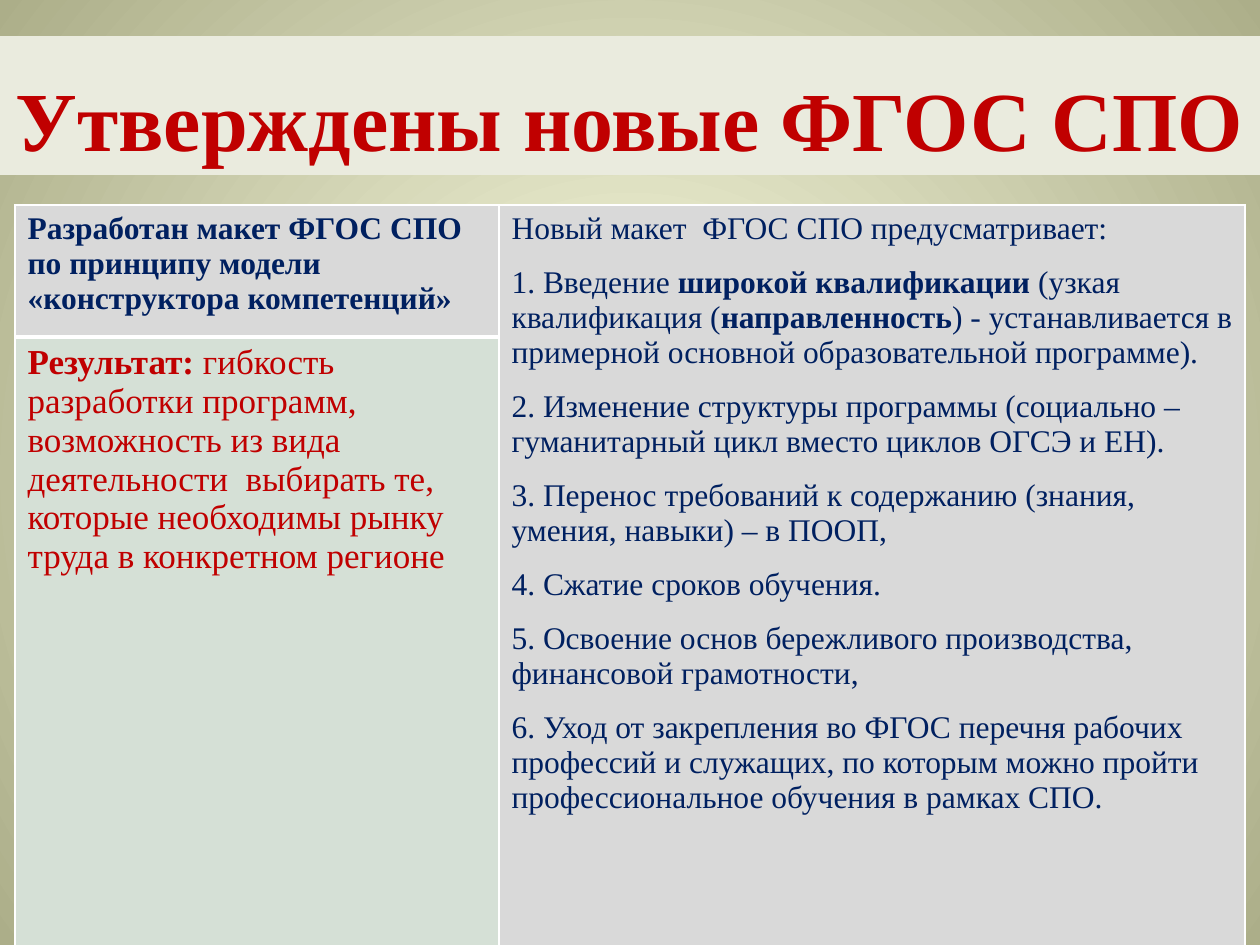
from lxml.etree import SubElement
from pptx import Presentation
from pptx.dml.color import RGBColor
from pptx.enum.text import MSO_ANCHOR, MSO_AUTO_SIZE, PP_ALIGN
from pptx.oxml import parse_xml
from pptx.oxml.ns import nsdecls, qn
from pptx.util import Emu, Pt

WHITE = RGBColor(0xFF, 0xFF, 0xFF)
RED = RGBColor(0xC0, 0x00, 0x00)
NAVY = RGBColor(0x00, 0x20, 0x60)
GREY = RGBColor(0xD9, 0xD9, 0xD9)
GREEN = RGBColor(0xD5, 0xE0, 0xD6)
CREAM = RGBColor(0xEA, 0xEB, 0xDE)
GLOW = RGBColor(0xFC, 0xFE, 0xE3)
OLIVE = RGBColor(0xAC, 0xAE, 0x89)

FONT = "Times New Roman"
EMU_PER_PX = 914400 / 126

TITLE = "Утверждены новые ФГОС СПО"
MODEL = [[("Разработан макет ФГОС СПО по принципу модели «конструктора компетенций»", True)]]
RESULT = [[
    ("Результат:", True),
    (" гибкость разработки программ, возможность из вида деятельности  выбирать те, "
     "которые необходимы рынку труда в конкретном регионе", False),
]]
CHANGES = [
    [("Новый макет  ФГОС СПО предусматривает:", False)],
    [
        ("1. Введение ", False),
        ("широкой квалификации ", True),
        ("(узкая квалификация (", False),
        ("направленность", True),
        (") - устанавливается в примерной основной образовательной программе).", False),
    ],
    [("2. Изменение структуры программы (социально – гуманитарный цикл "
      "вместо циклов ОГСЭ и ЕН).", False)],
    [("3. Перенос требований к содержанию (знания, умения, навыки) – в ПООП,", False)],
    [("4. Сжатие сроков обучения.", False)],
    [("5. Освоение основ бережливого производства, финансовой грамотности,", False)],
    [("6. Уход от закрепления во ФГОС перечня рабочих профессий и служащих, "
      "по которым можно пройти профессиональное обучения в рамках СПО.", False)],
]


def px(length):
    return Emu(round(length * EMU_PER_PX))


def write_text(frame, paragraphs, size, color, align=PP_ALIGN.LEFT, gap=0):
    frame.word_wrap = True
    for index, spans in enumerate(paragraphs):
        para = frame.paragraphs[0] if index == 0 else frame.add_paragraph()
        para.alignment = align
        para.space_before = Pt(gap if index else 0)
        for text, bold in spans:
            span = para.add_run()
            span.text = text
            span.font.name = FONT
            span.font.size = Pt(size)
            span.font.bold = bold
            span.font.color.rgb = color


def paint_background(slide):
    fill = slide.background.fill
    fill.gradient()
    for stop, color, position in zip(fill.gradient_stops, (GLOW, OLIVE), (0, 1)):
        stop.color.rgb = color
        stop.position = position
    gradient = next(slide.element.iter(qn("a:gradFill")))
    gradient.remove(gradient.find(qn("a:lin")))
    circle = SubElement(gradient, qn("a:path"), path="circle")
    SubElement(circle, qn("a:fillToRect"), l="50000", t="50000", r="50000", b="50000")


def place_title(slide, left, top, width, height):
    box = slide.shapes.title
    box.left, box.top, box.width, box.height = map(px, (left, top, width, height))
    box.fill.solid()
    box.fill.fore_color.rgb = CREAM
    frame = box.text_frame
    frame.auto_size = MSO_AUTO_SIZE.NONE
    frame.vertical_anchor = MSO_ANCHOR.BOTTOM
    write_text(frame, [[(TITLE, True)]], 48, RED, align=PP_ALIGN.CENTER)


def style_cell(cell, color, top=1, bottom=1):
    cell.fill.solid()
    cell.fill.fore_color.rgb = color
    properties = cell._tc.get_or_add_tcPr()
    for index, (side, points) in enumerate(zip("LRTB", (1, 1, top, bottom))):
        properties.insert(index, parse_xml(
            f'<a:ln{side} {nsdecls("a")} w="{Pt(points)}"><a:solidFill>'
            f'<a:srgbClr val="{WHITE}"/></a:solidFill></a:ln{side}>'))


def place_table(slide, left, top, columns, rows):
    frame = slide.shapes.add_table(
        len(rows), len(columns), px(left), px(top), px(sum(columns)), px(sum(rows)))
    table = frame.table
    table.first_row = table.horz_banding = False
    for column, width in zip(table.columns, columns):
        column.width = px(width)
    for row, height in zip(table.rows, rows):
        row.height = px(height)
    model, result = table.cell(0, 0), table.cell(1, 0)
    changes, covered = table.cell(0, 1), table.cell(1, 1)
    changes.merge(covered)
    style_cell(model, GREY, bottom=3)
    style_cell(result, GREEN, top=3)
    style_cell(changes, GREY)
    style_cell(covered, GREY)
    write_text(model.text_frame, MODEL, 18, NAVY)
    write_text(result.text_frame, RESULT, 20, RED)
    write_text(changes.text_frame, CHANGES, 18, NAVY, gap=11)


def main():
    deck = Presentation()
    deck.slide_width, deck.slide_height = px(1260), px(945)
    page = deck.slides.add_slide(deck.slide_layouts[5])
    paint_background(page)
    place_title(page, 0, 36, 1260, 139)
    place_table(page, 15, 205, columns=(484, 746), rows=(132, 608))
    deck.save("out.pptx")


if __name__ == "__main__":
    main()
